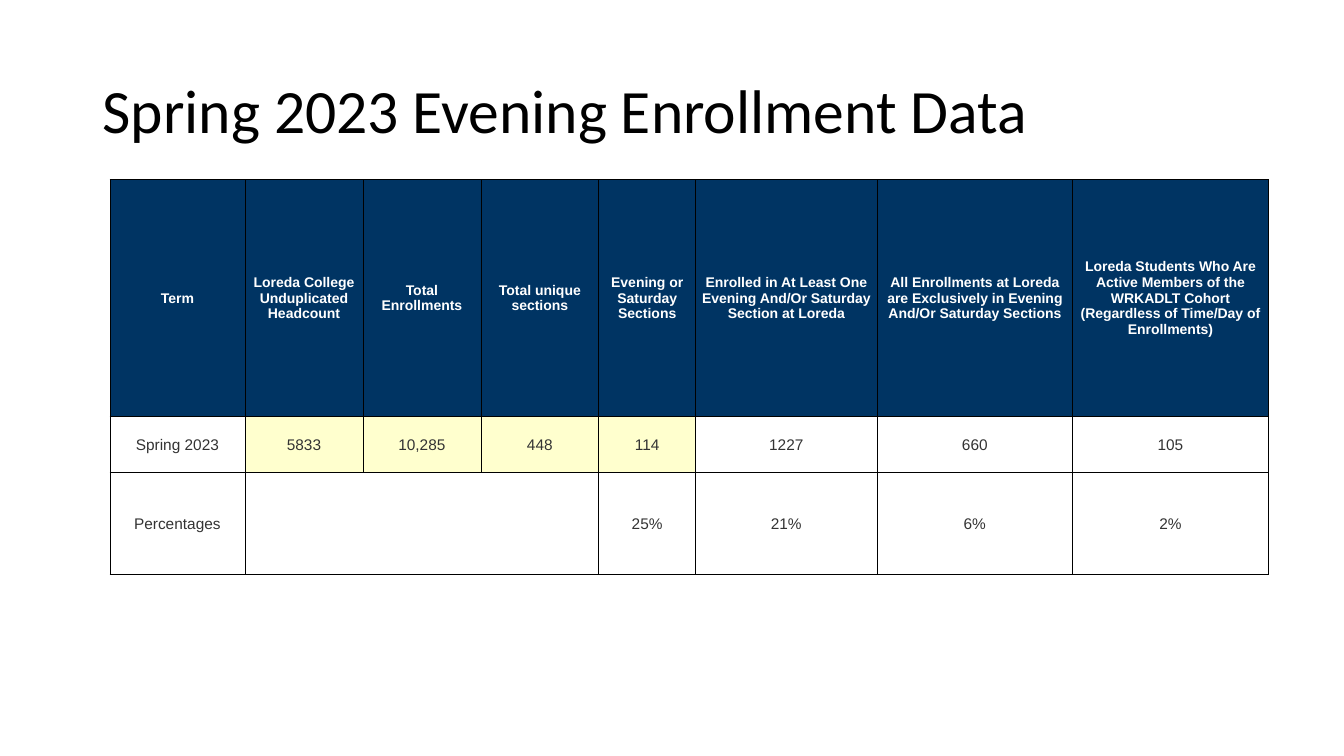
from dataclasses import dataclass

from lxml import etree
from pptx import Presentation
from pptx import util as u
from pptx.dml.color import RGBColor
from pptx.enum import text
from pptx.oxml.ns import qn

PX = 9144
BLACK = RGBColor(0x00, 0x00, 0x00)
WHITE = RGBColor(0xFF, 0xFF, 0xFF)
NAVY = RGBColor(0x00, 0x34, 0x63)
CREAM = RGBColor(0xFF, 0xFF, 0xCE)
GRAY = RGBColor(0x33, 0x33, 0x33)


@dataclass(frozen=True)
class TextStyle:
    """Font settings of a run."""
    font: str
    size: int
    color: RGBColor
    bold: bool = False


@dataclass(frozen=True)
class Column:
    """One table column: its width, heading and values."""
    width: int
    heading: str
    enrollment: str
    percentage: str
    fill: RGBColor = WHITE


TITLE = TextStyle("Calibri", 44, BLACK)
HEADING = TextStyle("Arial", 10, WHITE, True)
BODY = TextStyle("Arial", 11, GRAY)

ROW_HEIGHTS = (235, 56, 101)
COLUMNS = (
    Column(134, "Term", "Spring 2023", "Percentages"),
    Column(117, "Loreda College Unduplicated Headcount", "5833", "", CREAM),
    Column(117, "Total Enrollments", "10,285", "", CREAM),
    Column(117, "Total unique sections", "448", "", CREAM),
    Column(96, "Evening or Saturday Sections", "114", "25%", CREAM),
    Column(180, "Enrolled in At Least One Evening And/Or Saturday Section at Loreda",
           "1227", "21%"),
    Column(194, "All Enrollments at Loreda are Exclusively in Evening And/Or Saturday Sections",
           "660", "6%"),
    Column(194, "Loreda Students Who Are Active Members of the WRKADLT Cohort "
           "(Regardless of Time/Day of Enrollments)", "105", "2%"),
)


def px(n: int) -> u.Emu:
    """Convert px to EMU."""
    return u.Emu(n * PX)


def add_run(p, words: str, style: TextStyle) -> None:
    """Add a styled run to a paragraph."""
    r = p.add_run()
    r.text = words
    r.font.name = style.font
    r.font.size = u.Pt(style.size)
    r.font.bold = style.bold
    r.font.color.rgb = style.color


def set_borders(cell, hidden: set[str]) -> None:
    """Draw thin black borders on all sides but the hidden ones."""
    tc_pr = cell._tc.get_or_add_tcPr()
    for side in "LRTB":
        ln = etree.SubElement(tc_pr, qn(f"a:ln{side}"), w=str(u.Pt(0.5)))
        if side in hidden:
            etree.SubElement(ln, qn("a:noFill"))
        else:
            fill = etree.SubElement(ln, qn("a:solidFill"))
            etree.SubElement(fill, qn("a:srgbClr"), val=str(BLACK))


def fill_cell(cell, words: str, style: TextStyle, fill: RGBColor, hidden: set[str]) -> None:
    """Write and format one table cell."""
    set_borders(cell, hidden)
    cell.fill.solid()
    cell.fill.fore_color.rgb = fill
    cell.vertical_anchor = text.MSO_ANCHOR.MIDDLE
    cell.margin_left = cell.margin_right = cell.margin_top = px(1)
    cell.margin_bottom = 0
    if words:
        p = cell.text_frame.paragraphs[0]
        p.alignment = text.PP_ALIGN.CENTER
        add_run(p, words, style)


def add_title(s, words: str) -> None:
    """Add the slide title."""
    tf = s.shapes.add_textbox(px(92), px(40), px(1150), px(145)).text_frame
    tf.word_wrap = True
    tf.vertical_anchor = text.MSO_ANCHOR.MIDDLE
    p = tf.paragraphs[0]
    p.line_spacing = 0.9
    add_run(p, words, TITLE)


def add_enrollment_table(s) -> None:
    """Add the enrollment table."""
    width = sum(col.width for col in COLUMNS)
    table = s.shapes.add_table(len(ROW_HEIGHTS), len(COLUMNS), px(109), px(178),
                               px(width), px(sum(ROW_HEIGHTS))).table
    table.first_row = table.horz_banding = False
    for row, height in zip(table.rows, ROW_HEIGHTS):
        row.height = px(height)
    blanks = [i for i, col in enumerate(COLUMNS) if not col.percentage]
    for i, col in enumerate(COLUMNS):
        table.columns[i].width = px(col.width)
        hidden = set()
        if i in blanks[1:]:
            hidden.add("L")
        if i in blanks[:-1]:
            hidden.add("R")
        fill_cell(table.cell(0, i), col.heading, HEADING, NAVY, set())
        fill_cell(table.cell(1, i), col.enrollment, BODY, col.fill, set())
        fill_cell(table.cell(2, i), col.percentage, BODY, WHITE, hidden)


def main() -> None:
    """Build and save the slide."""
    prs = Presentation()
    prs.slide_width, prs.slide_height = px(1333), px(750)
    s = prs.slides.add_slide(prs.slide_layouts[6])
    add_title(s, "Spring 2023 Evening Enrollment Data")
    add_enrollment_table(s)
    prs.save("out.pptx")


if __name__ == "__main__":
    main()
